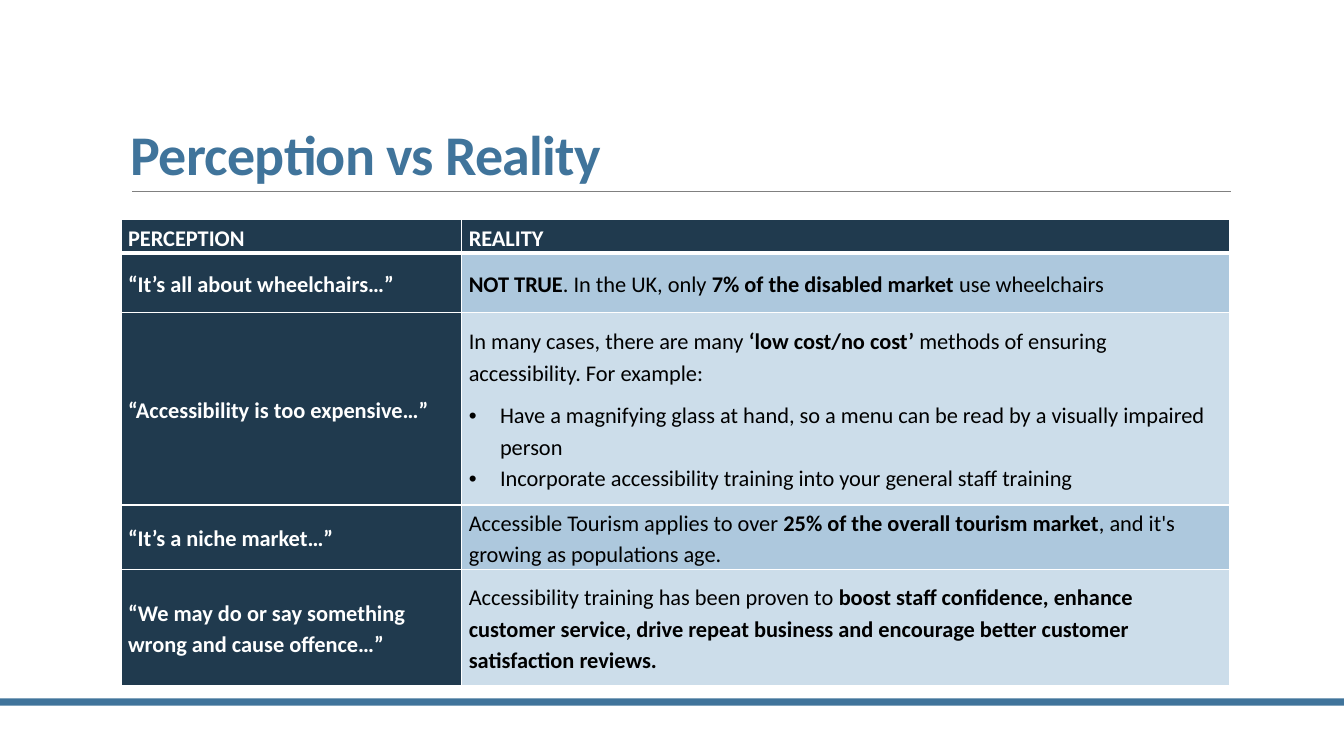
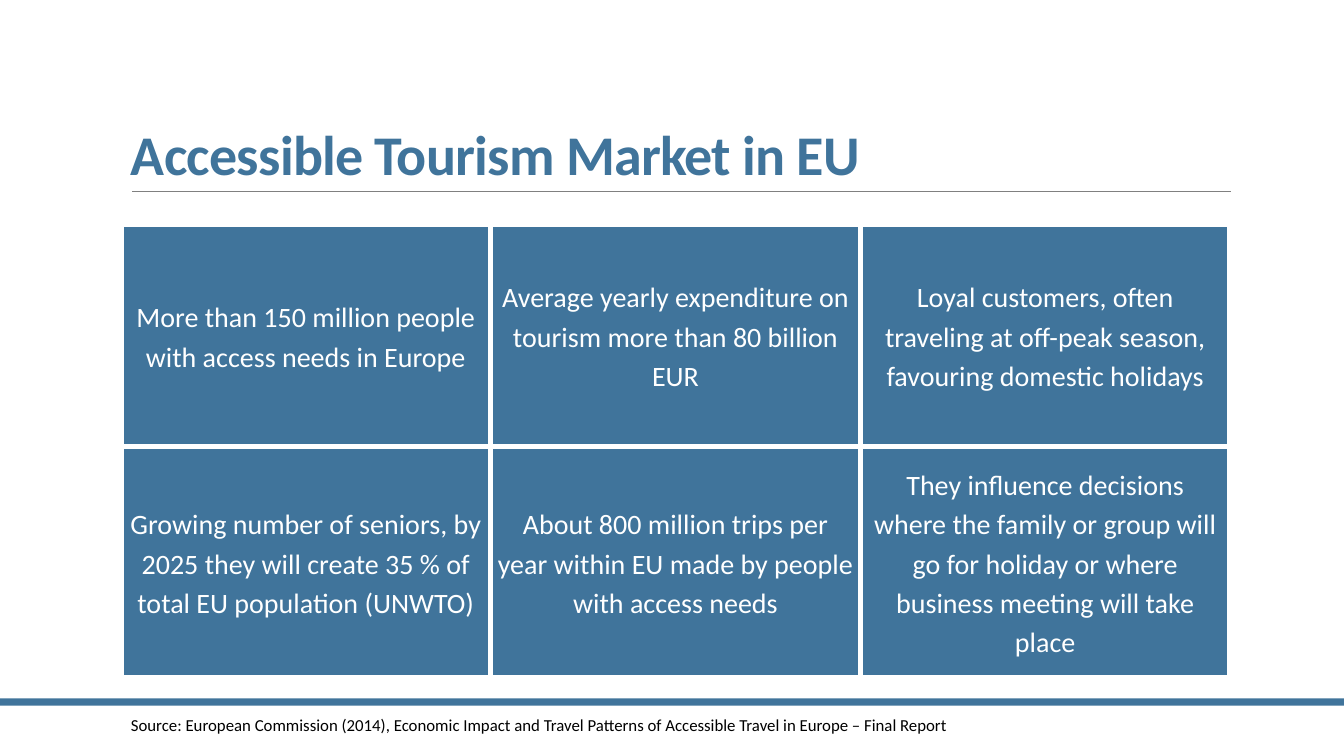
from dataclasses import dataclass

from lxml import etree
from pptx import Presentation
from pptx.dml.color import RGBColor
from pptx.enum import shapes, text
from pptx.oxml import ns
from pptx.util import Inches, Pt

FONT = "Calibri"
BLUE, NAVY, GREY = "40749B", "203A4E", "808080"
MID, PALE = "ADC8DD", "CCDDEA"
WHITE, BLACK = "FFFFFF", "000000"
LEFT, WIDTH = 1.2, 11
MARK = "|"
DOT = "• "


@dataclass
class Style:
    size: float
    color: str = BLACK
    bold: bool = False
    align: text.PP_ALIGN = text.PP_ALIGN.LEFT
    lead: float = 1.0
    after: float = 0


@dataclass
class Cell:
    lines: list[str]
    fill: str
    style: Style
    top: float
    base: float


@dataclass
class Grid:
    top: float
    cols: list[float]
    rows: list[float]
    cells: list[list[Cell]]
    edge: float


TITLE = Style(40, BLUE, True, lead=0.85)
LABEL = Style(16, WHITE, True, lead=1.15, after=8)
BODY = Style(16, lead=1.15, after=8)
FACT = Style(20, WHITE, align=text.PP_ALIGN.CENTER, lead=1.15, after=8)
NOTE = Style(12)

MYTHS = [
    ("“It’s all about wheelchairs…”",
     ["|NOT TRUE|. In the UK, only |7% of the disabled market |use wheelchairs"]),
    ("“Accessibility is too expensive…”",
     ["In many cases, there are many |‘low cost/no cost’ |methods of ensuring "
      "accessibility. For example:",
      "• Have a magnifying glass at hand, so a menu can be read by a visually "
      "impaired person",
      "• Incorporate accessibility training into your general staff training"]),
    ("“It’s a niche market…”",
     ["Accessible Tourism applies to over |25% of the overall tourism market|, "
      "and it's growing as populations age."]),
    ("“We may do or say something wrong and cause offence…”",
     ["Accessibility training has been proven to |boost staff confidence, enhance "
      "customer service, drive repeat business and encourage better customer "
      "satisfaction reviews."]),
]
FACTS = [
    ["More than 150 million people with access needs in Europe",
     "Average yearly expenditure on tourism more than 80 billion EUR",
     "Loyal customers, often traveling at off-peak season, favouring domestic "
     "holidays"],
    ["Growing number of seniors, by 2025 they will create 35 % of total EU "
     "population (UNWTO)",
     "About 800 million trips per year within EU made by people with access needs",
     "They influence decisions where the family or group will go for holiday or "
     "where business meeting will take place"],
]
SOURCE = ("Source: European Commission (2014), Economic Impact and Travel Patterns "
          "of Accessible Travel in Europe – Final Report")


def rgb(code: str) -> RGBColor:
    return RGBColor.from_string(code)


def add_dot(para) -> None:
    props = para._p.get_or_add_pPr()
    props.set("marL", str(Inches(0.31)))
    props.set("indent", str(-Inches(0.31)))
    etree.SubElement(props, ns.qn("a:buFont")).set("typeface", "Arial")
    etree.SubElement(props, ns.qn("a:buChar")).set("char", DOT.strip())


def write(frame, lines: list[str], style: Style) -> None:
    frame.word_wrap = True
    for i, line in enumerate(lines):
        para = frame.paragraphs[0] if i == 0 else frame.add_paragraph()
        if line.startswith(DOT):
            add_dot(para)
        para.alignment = style.align
        para.line_spacing = style.lead
        tight = i + 1 < len(lines) and line.startswith(DOT)
        para.space_after = Pt(0 if tight else style.after)
        for j, part in enumerate(line.removeprefix(DOT).split(MARK)):
            if part:
                run = para.add_run()
                run.text = part
                font = run.font
                font.name, font.size = FONT, Pt(style.size)
                font.bold = style.bold or j % 2 == 1
                font.color.rgb = rgb(style.color)


def add_text(slide, top: float, high: float, line: str, style: Style):
    box = slide.shapes.add_textbox(Inches(LEFT), Inches(top), Inches(WIDTH), Inches(high))
    write(box.text_frame, [line], style)
    return box.text_frame


def add_base(deck, title: str):
    slide = deck.slides.add_slide(deck.slide_layouts[6])
    band = slide.shapes.add_shape(shapes.MSO_SHAPE.RECTANGLE, 0, Inches(6.93),
                                  deck.slide_width, Inches(0.07))
    band.shadow.inherit = False
    band.fill.solid()
    band.fill.fore_color.rgb = rgb(BLUE)
    band.line.fill.background()
    rule = slide.shapes.add_connector(shapes.MSO_CONNECTOR.STRAIGHT, Inches(1.31),
                                      Inches(1.9), Inches(12.21), Inches(1.9))
    rule.line.color.rgb = rgb(GREY)
    rule.line.width = Pt(0.5)
    etree.SubElement(rule._element.spPr, ns.qn("a:effectLst"))
    frame = add_text(slide, 0.31, 1.59, title, TITLE)
    frame.vertical_anchor = text.MSO_ANCHOR.BOTTOM
    for run in frame.paragraphs[0].runs:
        run._r.get_or_add_rPr().set("spc", "-50")
    return slide


def add_edges(cell, sides: dict[str, float]) -> None:
    props = cell._tc.get_or_add_tcPr()
    for i, (side, width) in enumerate(sides.items()):
        line = etree.Element(ns.qn(f"a:ln{side}"), w=str(Pt(width)))
        fill = etree.SubElement(line, ns.qn("a:solidFill"))
        etree.SubElement(fill, ns.qn("a:srgbClr")).set("val", WHITE)
        props.insert(i, line)


def add_grid(slide, grid: Grid) -> None:
    table = slide.shapes.add_table(
        len(grid.rows), len(grid.cols), Inches(LEFT), Inches(grid.top),
        Inches(sum(grid.cols)), Inches(sum(grid.rows))).table
    table.first_row = table.horz_banding = False
    for col, wide in zip(table.columns, grid.cols):
        col.width = Inches(wide)
    for row, high, cells in zip(table.rows, grid.rows, grid.cells):
        row.height = Inches(high)
        for cell, item in zip(row.cells, cells):
            cell.margin_left = cell.margin_right = Inches(0.07)
            cell.margin_top = cell.margin_bottom = 0
            cell.vertical_anchor = text.MSO_ANCHOR.MIDDLE
            cell.fill.solid()
            cell.fill.fore_color.rgb = rgb(item.fill)
            add_edges(cell, {"L": grid.edge, "R": grid.edge,
                             "T": item.top, "B": item.base})
            write(cell.text_frame, item.lines, item.style)


def myth_grid() -> Grid:
    cells = [[Cell([head], NAVY, LABEL, 1, 3) for head in ("PERCEPTION", "REALITY")]]
    for i, (myth, facts) in enumerate(MYTHS):
        top = 3 if i == 0 else 1
        cells.append([Cell([myth], NAVY, LABEL, top, 1),
                      Cell(facts, PALE if i % 2 else MID, BODY, top, 1)])
    return Grid(2.18, [3.38, 7.62], [0.33, 0.59, 1.91, 0.64, 1.15], cells, 1)


def fact_grid() -> Grid:
    edge = 4.5
    cells = [[Cell([fact], BLUE, FACT, edge, edge) for fact in row] for row in FACTS]
    return Grid(2.22, [WIDTH / 3] * 3, [2.21, 2.29], cells, edge)


def main() -> None:
    deck = Presentation()
    deck.slide_width, deck.slide_height = Inches(13.33), Inches(7.5)
    add_grid(add_base(deck, "Perception vs Reality"), myth_grid())
    market = add_base(deck, "Accessible Tourism Market in EU")
    add_grid(market, fact_grid())
    add_text(market, 7.04, 0.3, SOURCE, NOTE)
    deck.save("out.pptx")


if __name__ == "__main__":
    main()
